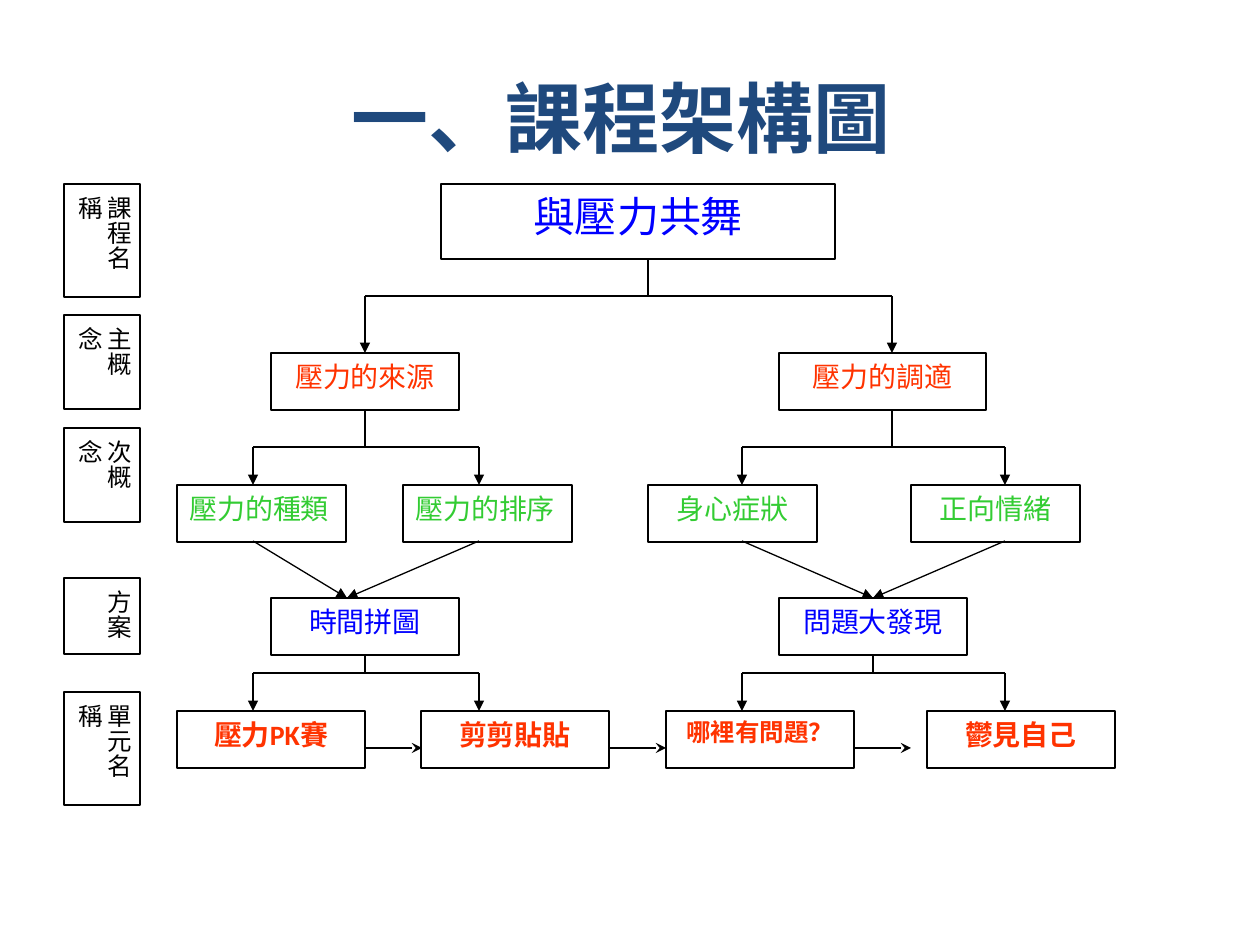
from lxml.etree import SubElement
from pptx import Presentation
from pptx.dml.color import RGBColor
from pptx.enum.shapes import MSO_CONNECTOR as Connector, MSO_SHAPE as Shape
from pptx.enum.text import MSO_ANCHOR as Anchor, MSO_AUTO_SIZE as AutoSize, PP_ALIGN as Align
from pptx.oxml.ns import qn
from pptx.util import Emu, Pt

BLACK, WHITE, NAVY = "000000", "FFFFFF", "1F497D"
BLUE, RED, GREEN = "0000FF", "FF3300", "33CC33"
BOX_HEIGHT = 57


def px(length):
    return Emu(round(length * 914400 / 126))


def color(value):
    return RGBColor.from_string(value)


def style_text(frame, text, size, ink, align, font="Calibri", bold=False):
    frame.word_wrap = True
    para = frame.paragraphs[0]
    para.text = text
    para.alignment = align
    span = para.runs[0].font
    span.name, span.size, span.bold = font, Pt(size), bold
    span.color.rgb = color(ink)


def add_box(page, area, text, ink, size=16, align=Align.CENTER, filled=True, **style):
    box = page.shapes.add_shape(Shape.RECTANGLE, *map(px, area))
    box.shadow.inherit = False
    if filled:
        box.fill.solid()
        box.fill.fore_color.rgb = color(WHITE)
    else:
        box.fill.background()
    box.line.color.rgb = color(BLACK)
    box.line.width = Pt(0.75)
    box.text_frame.vertical_anchor = Anchor.TOP
    style_text(box.text_frame, text, size, ink, align, **style)
    return box


def side_of(box, x, y):
    middle = box.left + box.width / 2
    for site, edge in ((0, box.top), (2, box.top + box.height)):
        if max(abs(px(x) - middle), abs(px(y) - edge)) <= px(2):
            return site
    return None


def add_line(page, start, end, head=None, source=None, target=None):
    line = page.shapes.add_connector(Connector.STRAIGHT, *map(px, (*start, *end)))
    line.line.color.rgb = color(BLACK)
    line.line.width = Pt(0.75)
    if head:
        SubElement(line.line._get_or_add_ln(), qn("a:tailEnd"), type=head)
    SubElement(line._element.spPr, qn("a:effectLst"))
    if source and side_of(source, *start) is not None:
        line.begin_connect(source, side_of(source, *start))
    if target and side_of(target, *end) is not None:
        line.end_connect(target, side_of(target, *end))


def add_fork(page, parent, children, stem, drops, top, bar, bottom):
    add_line(page, (stem, top), (stem, bar), source=parent)
    add_line(page, (drops[0], bar), (drops[1], bar))
    for child, x in zip(children, drops):
        add_line(page, (x, bar), (x, bottom), "triangle", target=child)


def add_title(page, area, text):
    title = page.shapes.title
    title.left, title.top, title.width, title.height = map(px, area)
    frame = title.text_frame
    frame.auto_size = AutoSize.NONE
    frame.vertical_anchor = Anchor.MIDDLE
    style_text(frame, text, 44, NAVY, Align.CENTER, "Arial", True)


def add_level_labels(page, left, top, width):
    labels = [("課程名稱", 0, 113), ("主概念", 131, 94), ("次概念", 244, 94),
              ("方案", 394, 76), ("單元名稱", 508, 113)]
    for text, offset, height in labels:
        box = add_box(page, (left, top + offset, width, height), text, BLACK, 14, Align.LEFT)
        box.text_frame._txBody.bodyPr.set("vert", "eaVert")


def add_branch(page, left, top, concept, topics, plan, stem, plan_stem, drops, meet):
    concept_text, concept_width = concept
    concept_box = add_box(page, (left + 94, top, concept_width, BOX_HEIGHT), concept_text, RED)
    topic_boxes = [add_box(page, (left + x, top + 132, 169, BOX_HEIGHT), text, GREEN, align=align)
                   for text, x, align in topics]
    plan_box = add_box(page, (left + 94, top + 245, 188, BOX_HEIGHT), plan, BLUE)
    add_fork(page, concept_box, topic_boxes, left + stem, [left + x for x in drops],
             top + 57, top + 94, top + 132)
    for box, x in zip(topic_boxes, drops):
        add_line(page, (left + x, top + 188), (left + meet, top + 245), "triangle", box, plan_box)
    add_fork(page, plan_box, [None, None], left + plan_stem, [left + x for x in drops],
             top + 302, top + 320, top + 358)
    return concept_box


def add_units(page, left, top):
    units = [("壓力PK賽", 0, 16), ("剪剪貼貼", 244, 16), ("哪裡有問題？", 489, 14), ("鬱見自己", 750, 16)]
    for text, x, size in units:
        add_box(page, (left + x, top, 188, BOX_HEIGHT), text, RED, size, bold=True)
    for _, x, _ in units[:-1]:
        add_line(page, (left + x + 188, top + 37), (left + x + 245, top + 37), "stealth")


def main():
    deck = Presentation()
    deck.slide_width, deck.slide_height = px(1260), px(945)
    page = deck.slides.add_slide(deck.slide_layouts[5])
    add_title(page, (63, 38, 1134, 157), "一、課程架構圖 ")
    add_level_labels(page, 64, 184, 76)
    root = add_box(page, (441, 184, 394, 75), "與壓力共舞", BLUE, 24,
                   filled=False, font="Noto Sans CJK SC")
    sources = add_branch(page, 177, 353, ("壓力的來源", 188),
                         [("壓力的種類", 0, Align.LEFT), ("壓力的排序", 226, Align.LEFT)],
                         "時間拼圖", 188, 188, (76, 302), 170)
    relief = add_branch(page, 685, 353, ("壓力的調適", 207),
                        [("身心症狀", -37, Align.CENTER), ("正向情緒", 226, Align.CENTER)],
                        "問題大發現", 207, 188, (57, 320), 188)
    add_fork(page, root, [sources, relief], 648, (365, 892), 259, 296, 353)
    add_units(page, 177, 711)
    deck.save("out.pptx")


if __name__ == "__main__":
    main()
